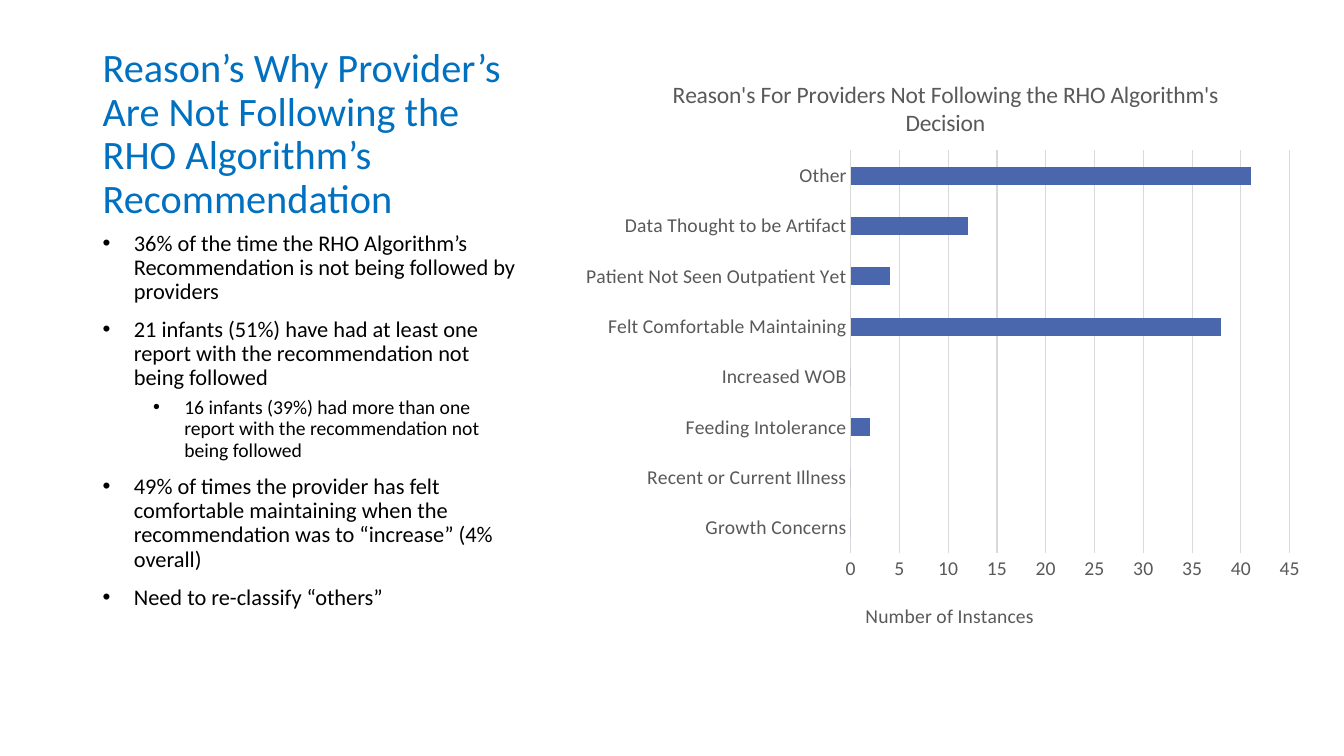
import pptx
import pptx.util
import pptx.dml.color
import pptx.chart.data
import pptx.enum.chart
import pptx.enum.text
import pptx.oxml
import pptx.oxml.ns

Inches, Pt = pptx.util.Inches, pptx.util.Pt
qn = pptx.oxml.ns.qn

# Content
FONT = "Calibri"
COLORS = {"title": "0070C0", "body": "000000", "label": "595959",
          "grid": "D9D9D9", "bar": "4A66AC"}
TITLE = "Reason’s Why Provider’s Are Not Following the RHO Algorithm’s Recommendation"
BULLETS = [  # (level, text)
    (0, "36% of the time the RHO Algorithm’s Recommendation is not being followed by providers"),
    (0, "21 infants (51%) have had at least one report with the recommendation not being followed"),
    (1, "16 infants (39%) had more than one report with the recommendation not being followed"),
    (0, "49% of times the provider has felt comfortable maintaining when the "
        "recommendation was to “increase” (4% overall)"),
    (0, "Need to re-classify “others”"),
]
LEVELS = [  # size, space before, left margin
    {"size": 16, "before": 10, "margin": 0.31},
    {"size": 14, "before": 5, "margin": 0.81},
]
HANGING = 0.31
CHART_TITLE = "Reason's For Providers Not Following the RHO Algorithm's Decision"
AXIS_TITLE = "Number of Instances"
REASONS = [
    ("Growth Concerns", 0),
    ("Recent or Current Illness", 0),
    ("Feeding Intolerance", 2),
    ("Increased WOB", 0),
    ("Felt Comfortable Maintaining", 38),
    ("Patient Not Seen Outpatient Yet", 4),
    ("Data Thought to be Artifact", 12),
    ("Other", 41),
]


def rgb(name):
    return pptx.dml.color.RGBColor.from_string(COLORS[name])


def set_font(font, size, color):
    font.name, font.size, font.bold = FONT, Pt(size), False
    font.color.rgb = rgb(color)


def write(para, text, size=14, color="label", before=None, spacing=None, margin=None):
    """Fill a paragraph; a margin makes it a hanging bullet."""
    if margin is not None:
        properties = para._p.get_or_add_pPr()
        properties.set("marL", str(Inches(margin)))
        properties.set("indent", str(-Inches(HANGING)))
        bullet_font = pptx.oxml.parse_xml(
            f'<a:buFont {pptx.oxml.ns.nsdecls("a")} typeface="Arial"/>')
        bullet = pptx.oxml.parse_xml(
            f'<a:buChar {pptx.oxml.ns.nsdecls("a")} char="•"/>')
        properties.extend([bullet_font, bullet])
    if before is not None:
        para.space_before = Pt(before)
    if spacing is not None:
        para.line_spacing = spacing
    span = para.add_run()
    span.text = text
    set_font(span.font, size, color)


def add_text_frame(page, left, top, width, height, anchor):
    box = page.shapes.add_textbox(*map(Inches, (left, top, width, height)))
    frame = box.text_frame
    frame.word_wrap = True
    frame.vertical_anchor = anchor
    return frame


def place(element, index, **fractions):
    """Give a chart part a fixed place, in fractions of the chart."""
    for old in element.findall(qn("c:layout")):
        element.remove(old)
    target = '<c:layoutTarget val="inner"/>' if "w" in fractions else ""
    modes = "".join(f'<c:{key}Mode val="edge"/>' for key in "xy")
    values = "".join(f'<c:{key} val="{value}"/>' for key, value in fractions.items())
    element.insert(index, pptx.oxml.parse_xml(
        f'<c:layout {pptx.oxml.ns.nsdecls("c")}><c:manualLayout>'
        f'{target}{modes}{values}</c:manualLayout></c:layout>'))


def add_reason_chart(page):
    data = pptx.chart.data.CategoryChartData()
    data.categories = [reason for reason, count in REASONS]
    data.add_series("Series 1", [count for reason, count in REASONS])
    chart = page.shapes.add_chart(
        pptx.enum.chart.XL_CHART_TYPE.BAR_CLUSTERED,
        *map(Inches, (5.67, 0.5, 7.38, 5.91)), data).chart
    chart.has_legend = False
    set_font(chart.font, 14, "body")

    # Bars
    plot = chart.plots[0]
    plot.gap_width = 182
    plot.vary_by_categories = False
    fill = plot.series[0].format.fill
    fill.solid()
    fill.fore_color.rgb = rgb("bar")

    # Axes
    reasons, counts = chart.category_axis, chart.value_axis
    for axis in (reasons, counts):
        axis.major_tick_mark = axis.minor_tick_mark = pptx.enum.chart.XL_TICK_MARK.NONE
        set_font(axis.tick_labels.font, 14, "label")
    counts.minimum_scale, counts.maximum_scale, counts.major_unit = 0, 45, 5
    counts.format.line.fill.background()
    counts.has_major_gridlines = True
    for line in (reasons.format.line, counts.major_gridlines.format.line):
        line.color.rgb = rgb("grid")
        line.width = Pt(0.75)

    # Titles and plot area
    for title, text, size, x, y in (
            (chart.chart_title, CHART_TITLE, 16.8, 0.13, 0.04),
            (counts.axis_title, AXIS_TITLE, 14, 0.39, 0.92)):
        write(title.text_frame.paragraphs[0], text, size=size)
        place(title._element, 1, x=x, y=y)
    plot_area = chart._chartSpace.find(qn("c:chart")).find(qn("c:plotArea"))
    place(plot_area, 0, x=0.375, y=0.168, w=0.59, h=0.676)


def main():
    deck = pptx.Presentation()
    deck.slide_width, deck.slide_height = Inches(13.33), Inches(7.5)
    page = deck.slides.add_slide(deck.slide_layouts[6])
    anchors = pptx.enum.text.MSO_ANCHOR

    # Heading
    heading = add_text_frame(page, 0.92, 0.5, 4.3, 1.75, anchors.BOTTOM)
    write(heading.paragraphs[0], TITLE, size=28.8, color="title", spacing=0.9)

    # Bullets
    body = add_text_frame(page, 0.92, 2.25, 4.3, 4.17, anchors.TOP)
    for number, (level, text) in enumerate(BULLETS):
        para = body.add_paragraph() if number else body.paragraphs[0]
        para.level = level
        style = dict(LEVELS[level])
        if number == 0:
            style["before"] = 0
        write(para, text, color="body", spacing=0.9, **style)

    add_reason_chart(page)
    deck.save("out.pptx")


if __name__ == "__main__":
    main()
